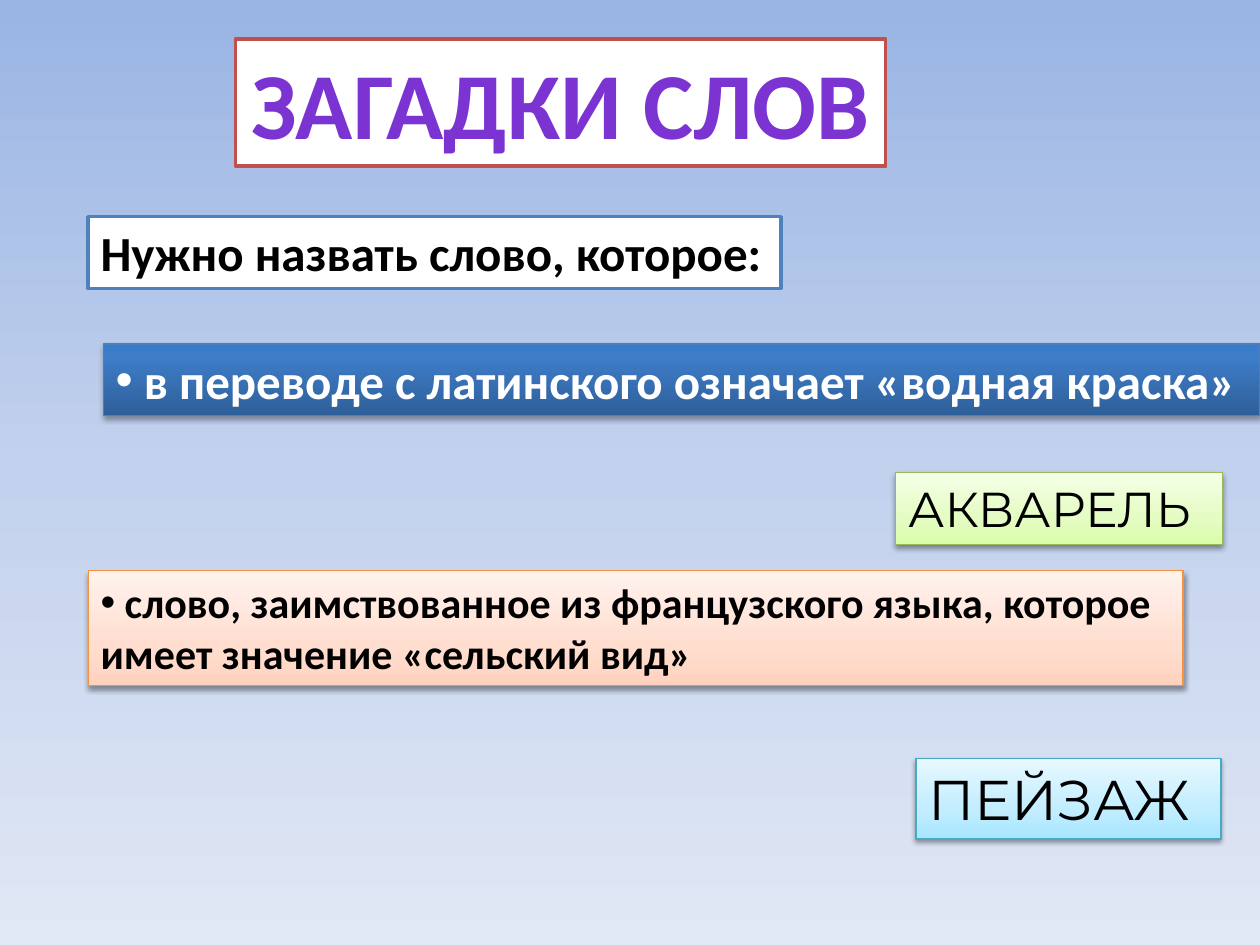
"""Build a slide of word riddles with two clues and their answers."""
from lxml import etree
from pptx import Presentation
from pptx.dml.color import RGBColor
from pptx.enum.shapes import MSO_SHAPE
from pptx.enum.text import MSO_ANCHOR, PP_ALIGN
from pptx.oxml.ns import qn
from pptx.util import Inches, Pt

RECT = MSO_SHAPE.RECTANGLE
TOP = MSO_ANCHOR.TOP
LEFT, MID = PP_ALIGN.LEFT, PP_ALIGN.CENTER

SKY = [(0, "9AB5E4"), (50, "C2D1ED"), (100, "E1E8F5")]
BLUE = [(0, "2F5F99"), (80, "3D7CC7"), (100, "3A7CCB")]
GREEN = [(0, "DAFDA7"), (35, "E4FCC2"), (100, "F5FFE7")]
PEACH = [(0, "FFD2BD"), (35, "FFDED0"), (100, "FFF2ED")]
AQUA = [(0, "A7E6FF"), (35, "C1EDFF"), (100, "E7F8FF")]

BOXES = [
    dict(at=(1.87, 0.31, 5.16, 1.01), fill="FFFFFF", line="C0504D", width=2,
         text=["ЗАГАДКИ СЛОВ"],
         form=dict(size=54, color="7B34D2", bold=True, align=MID)),
    dict(at=(0.7, 1.72, 5.5, 0.57), fill="FFFFFF", line="4F81BD", width=2,
         text=["Нужно назвать слово, которое:"],
         form=dict(size=28, bold=True)),
    dict(at=(0.82, 2.73, 9.18, 0.57), fill=BLUE, line="4B7EBC",
         shade=(35, 1.8),
         text=[" в переводе с латинского означает «водная краска»"],
         form=dict(size=28, color="FFFFFF", bold=True, bullet=True)),
    dict(at=(7.11, 3.75, 2.59, 0.57), fill=GREEN, line="98B955",
         shade=(38, 1.6), text=["АКВАРЕЛЬ"],
         form=dict(size=28, font="Montserrat")),
    dict(at=(0.7, 4.53, 8.69, 0.91), fill=PEACH, line="F69240",
         shade=(38, 1.6),
         text=[" слово, заимствованное из французского языка, которое",
               "имеет значение «сельский вид»"],
         form=dict(size=24, bold=True, bullet=True)),
    dict(at=(7.27, 6.02, 2.42, 0.64), fill=AQUA, line="46AAC5",
         shade=(38, 1.6), text=["ПЕЙЗАЖ"],
         form=dict(size=32, font="Montserrat")),
]


def tint(code):
    return RGBColor.from_string(code)


def node(home, tag, **attrs):
    return etree.SubElement(home, qn(tag), {k: str(v) for k, v in attrs.items()})


def blend(home, stops, angle):
    flat = home.find(qn("a:solidFill"))
    grad = etree.Element(qn("a:gradFill"), rotWithShape="1")
    row = node(grad, "a:gsLst")
    for place, code in stops:
        stop = node(row, "a:gs", pos=place * 1000)
        node(stop, "a:srgbClr", val=code)
    node(grad, "a:lin", ang=angle * 60000, scaled=0)
    home.replace(flat, grad)


def cast(shape, alpha, dist):
    effect = shape.element.spPr.find(qn("a:effectLst"))
    drop = node(effect, "a:outerShdw", blurRad=Pt(3.1), dist=Pt(dist),
                dir=90 * 60000, rotWithShape=0)
    color = node(drop, "a:srgbClr", val="000000")
    node(color, "a:alpha", val=alpha * 1000)


def write(shape, lines, size=28, color="000000", font="Calibri", bold=False,
          align=LEFT, bullet=False):
    frame = shape.text_frame
    frame.word_wrap = True
    frame.vertical_anchor = TOP
    for i, line in enumerate(lines):
        para = frame.add_paragraph() if i else frame.paragraphs[0]
        para.alignment = align
        if bullet and i == 0:
            props = para._p.get_or_add_pPr()
            node(props, "a:buFont", typeface="Arial")
            node(props, "a:buChar", char="•")
        run = para.add_run()
        run.text = line
        run.font.size, run.font.name, run.font.bold = Pt(size), font, bold
        run.font.color.rgb = tint(color)


def draw(slide, at, fill, line, text, form, width=0.75, shade=None):
    shape = slide.shapes.add_shape(RECT, *map(Inches, at))
    shape.fill.solid()
    if isinstance(fill, str):
        shape.fill.fore_color.rgb = tint(fill)
    else:
        blend(shape.element.spPr, fill, 270)
    shape.line.color.rgb = tint(line)
    shape.line.width = Pt(width)
    shape.shadow.inherit = False
    if shade:
        cast(shape, *shade)
    write(shape, text, **form)


def main():
    deck = Presentation()
    deck.slide_width, deck.slide_height = Inches(10), Inches(7.5)
    slide = deck.slides.add_slide(deck.slide_layouts[6])
    slide.background.fill.solid()
    blend(slide.element.find(".//" + qn("p:bgPr")), SKY, 90)
    for box in BOXES:
        draw(slide, **box)
    deck.save("out.pptx")


if __name__ == "__main__":
    main()
